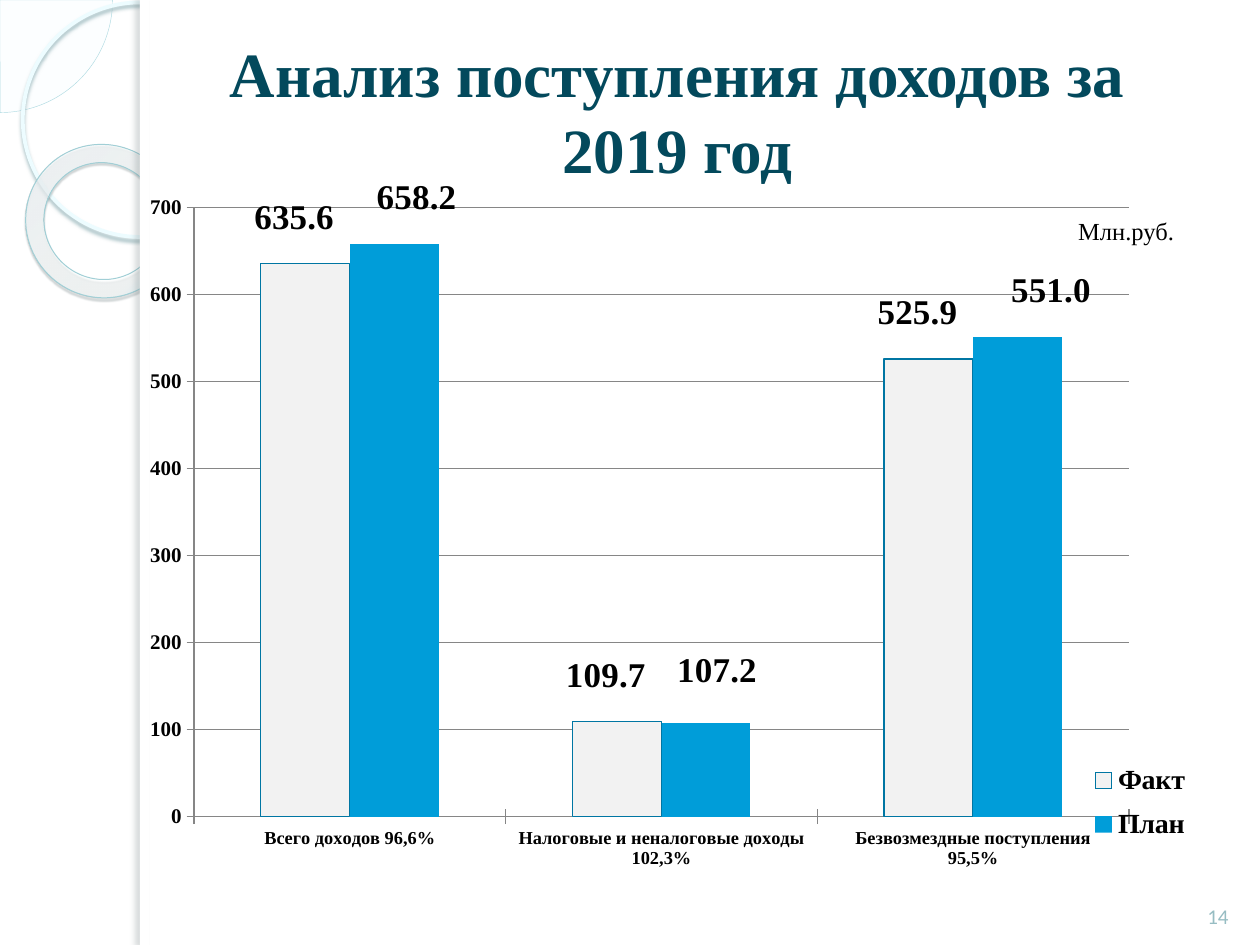
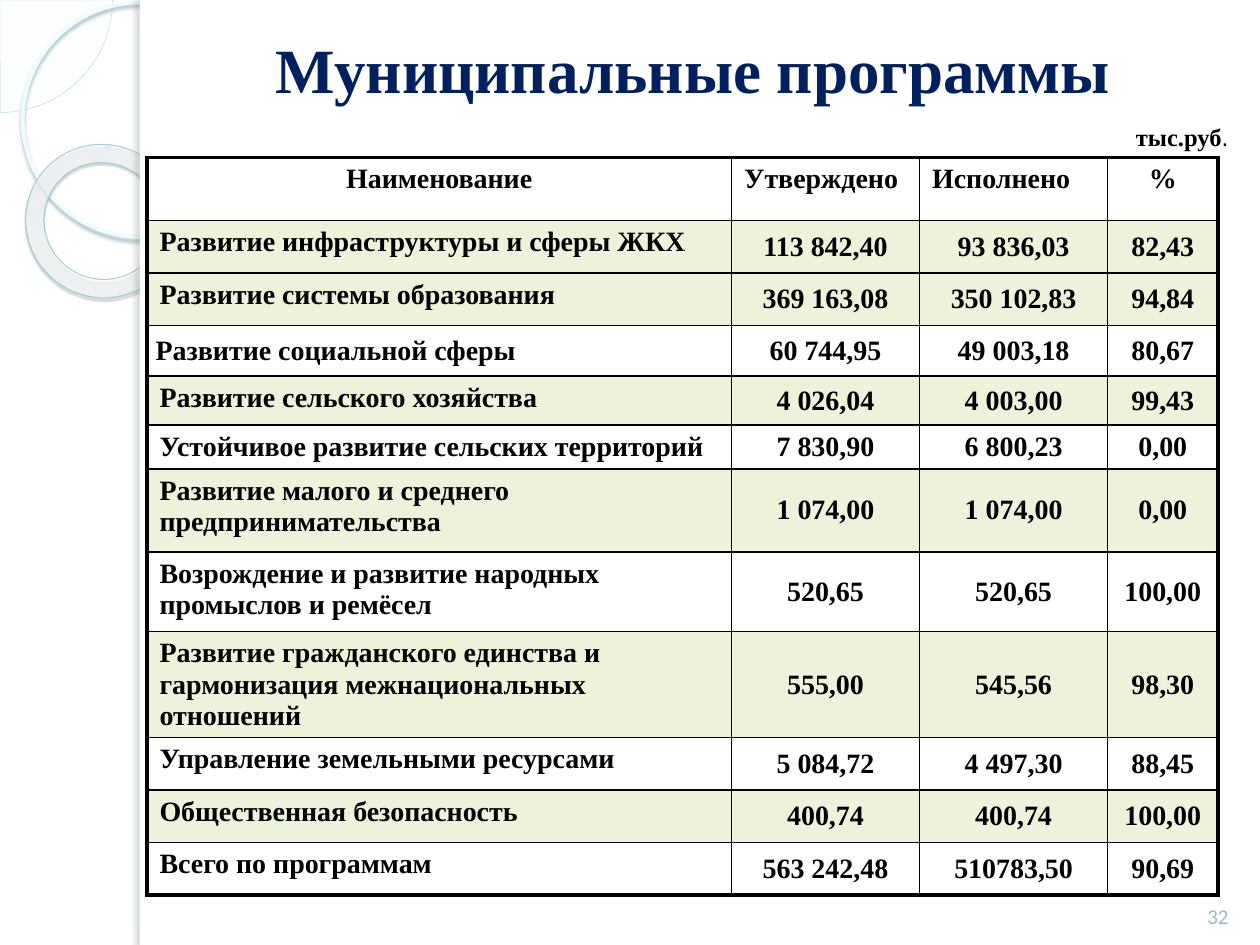
from pptx import Presentation
from pptx.chart import data as cd
from pptx.dml.color import RGBColor
from pptx.enum import chart as ch, shapes as sh, text as tx
from pptx.oxml import ns, parse_xml
from pptx.util import Pt

WHITE = RGBColor(0xFF, 0xFF, 0xFF)
BLACK = RGBColor(0, 0, 0)
TEAL = RGBColor(0x03, 0x49, 0x5C)
NAVY = RGBColor(0x00, 0x20, 0x60)
MIST = RGBColor(0x97, 0xBD, 0xC3)
GREEN = RGBColor(0xED, 0xF3, 0xDB)
GREY = RGBColor(0x86, 0x86, 0x86)
PALE = RGBColor(0xF2, 0xF2, 0xF2)
EDGE = RGBColor(0x00, 0x76, 0xA3)
BLUE = RGBColor(0x00, 0x9D, 0xD9)
ICE = RGBColor(0xF8, 0xFE, 0xFF)
RIM = RGBColor(0xAF, 0xDB, 0xE2)
GLOW = RGBColor(0xED, 0xFC, 0xFF)
RING = RGBColor(0xA1, 0xCF, 0xD6)

SERIF = "Times New Roman"
HEAD = {"name": SERIF, "size": Pt(36), "bold": True}
BODY = {"name": SERIF, "size": Pt(16), "bold": True}
NOTE = {"name": SERIF, "size": Pt(14), "bold": False}
PAGE = {"name": "Calibri", "size": Pt(12), "bold": False}
LEFT, MID, RIGHT = tx.PP_ALIGN.LEFT, tx.PP_ALIGN.CENTER, tx.PP_ALIGN.RIGHT

C15 = "http://schemas.microsoft.com/office/drawing/2012/chart"
GROUPS = ["Всего доходов 96,6%",
          "Налоговые и неналоговые доходы\n102,3%",
          "Безвозмездные поступления\n95,5%"]
BARS = [
    ("Факт", (635.6, 109.7, 525.9), PALE, EDGE,
     [(-0.01, -0.03), (-0.01, -0.03), (-0.01, -0.03)]),
    ("План", (658.2, 107.2, 551.0), BLUE, None,
     [(0.02, -0.03), (0.01, -0.04), (0.03, -0.03)]),
]

COLS = [334, 107.5, 107.5, 63]
ROWS = [
    (36, "Наименование", "Утверждено", "Исполнено", "%"),
    (30, "Развитие инфраструктуры и сферы ЖКХ", "113 842,40", "93 836,03", "82,43"),
    (30, "Развитие системы образования", "369 163,08", "350 102,83", "94,84"),
    (29, "Развитие социальной сферы", "60 744,95", "49 003,18", "80,67"),
    (28, "Развитие сельского хозяйства", "4 026,04", "4 003,00", "99,43"),
    (25, "Устойчивое развитие сельских территорий", "7 830,90", "6 800,23", "0,00"),
    (47.5, "Развитие малого и среднего предпринимательства",
     "1 074,00", "1 074,00", "0,00"),
    (45.5, "Возрождение и развитие народных промыслов и ремёсел",
     "520,65", "520,65", "100,00"),
    (60.5, "Развитие гражданского единства и гармонизация межнациональных отношений",
     "555,00", "545,56", "98,30"),
    (30, "Управление земельными ресурсами", "5 084,72", "4 497,30", "88,45"),
    (30, "Общественная безопасность", "400,74", "400,74", "100,00"),
    (30, "Всего по программам", "563 242,48", "510783,50", "90,69"),
]
SOCIAL = 3


def style(font, form, color=BLACK):
    """Apply a dict of format values and a colour to a font."""
    for key, val in form.items():
        setattr(font, key, val)
    font.color.rgb = color


def node(tag, attrs="", inner=""):
    """Return a new XML element with its namespace declared."""
    space = ns.nsdecls(tag.split(":")[0])
    return parse_xml(f"<{tag} {space} {attrs}>{inner}</{tag}>")


def tint(color, alpha):
    """Return the XML of a colour with an opacity in percent."""
    return f'<a:srgbClr val="{color}"><a:alpha val="{alpha * 1000}"/></a:srgbClr>'


def draw(slide, kind, box, fill=None, line=None, width=0, shade=None):
    """Add a preset shape with an optional fill, line and outer shadow."""
    shape = slide.shapes.add_shape(kind, *map(Pt, box))
    shape.shadow.inherit = False
    if fill is None:
        shape.fill.background()
    else:
        shape.fill.solid()
        shape.fill.fore_color.rgb = fill
    if line is None:
        shape.line.fill.background()
    else:
        shape.line.color.rgb = line
        shape.line.width = Pt(width)
    if shade:
        color, alpha, blur, dist, turn = shade
        attrs = (f'blurRad="{Pt(blur)}" dist="{Pt(dist)}" dir="{turn * 60000}" '
                 'algn="tl" rotWithShape="0"')
        effects = shape._element.spPr.find(ns.qn("a:effectLst"))
        effects.append(node("a:outerShdw", attrs, tint(color, alpha)))
    return shape


def add_decor(slide, layout):
    """Draw the side band once and hand it to the shared layout."""
    kinds = sh.MSO_SHAPE
    pie = draw(slide, kinds.PIE, (-64.3, -64.3, 128.6, 128.6), ICE, RIM, 0.25)
    pie.adjustments[0], pie.adjustments[1] = 0, 54
    color = pie._element.spPr.find(ns.qn("a:solidFill"))[0]
    color.append(node("a:alpha", 'val="33000"'))
    loop = draw(slide, kinds.OVAL, (13, 1.4, 134, 134), None, GLOW, 2.15,
                ("9CB9BE", 85, 2, 2, 90))
    ring = draw(slide, kinds.DONUT, (14.4, 82.8, 88.6, 87.1), None, RING, 0.58,
                ("4B5E61", 35, 1, 1.2, 75))
    ring.rotation = 38.6
    ring.adjustments[0] = 0.12
    stops = [(0, "F9FEFF", 70), (70, "FDFFFF", 55), (100, "9EF2FF", 60)]
    marks = "".join(f'<a:gs pos="{pos * 1000}">{tint(color, alpha)}</a:gs>'
                    for pos, color, alpha in stops)
    blend = node("a:gradFill", "", f'<a:gsLst>{marks}</a:gsLst><a:path path="circle">'
                 '<a:fillToRect l="-408000" t="-50000" r="508000" b="150000"/></a:path>')
    props = ring._element.spPr
    props.replace(props.find(ns.qn("a:noFill")), blend)
    panel = draw(slide, kinds.RECTANGLE, (80, 0, 640, 540), WHITE)
    strip = draw(slide, kinds.RECTANGLE, (80, 0, 5.5, 540), WHITE,
                 shade=("6C7A7C", 25, 3, 3, 180))
    for spot, part in enumerate((pie, loop, ring, panel, strip), 2):
        layout.shapes._spTree.insert(spot, part._element)


def set_title(slide, box, words, color):
    """Place and format the title."""
    title = slide.shapes.title
    title.left, title.top, title.width, title.height = map(Pt, box)
    frame = title.text_frame
    frame.text = words
    frame.auto_size = tx.MSO_AUTO_SIZE.NONE
    frame.vertical_anchor = tx.MSO_ANCHOR.MIDDLE
    line = frame.paragraphs[0]
    line.alignment = MID
    style(line.runs[0].font, HEAD, color)
    return title


def add_text(slide, box, runs, align, color=BLACK, anchor=tx.MSO_ANCHOR.TOP):
    """Add a line of text made of formatted runs."""
    frame = slide.shapes.add_textbox(*map(Pt, box)).text_frame
    frame.word_wrap = True
    frame.vertical_anchor = anchor
    line = frame.paragraphs[0]
    line.alignment = align
    for words, form in runs:
        run = line.add_run()
        run.text = words
        style(run.font, form, color)


def add_page(slide, number):
    """Add the page number in the lower right corner."""
    add_text(slide, (678, 497, 36, 37), [(number, PAGE)], MID, MIST,
             tx.MSO_ANCHOR.BOTTOM)


def set_place(part, spot, inner="", **sides):
    """Give a chart part a manual layout."""
    for old in part.findall(ns.qn("c:layout")):
        part.remove(old)
    marks = "".join(f'<c:{key} val="{val}"/>' for key, val in sides.items())
    part.insert(spot, node("c:layout", "", f"<c:manualLayout>{inner}{marks}</c:manualLayout>"))


def set_axis(axis, size):
    """Format a chart axis."""
    axis.major_tick_mark = ch.XL_TICK_MARK.CROSS
    axis.format.line.color.rgb = GREY
    style(axis.tick_labels.font, {**BODY, "size": Pt(size)})


def set_labels(series, shifts):
    """Format and shift the value labels, without leader lines."""
    for point, (x, y) in enumerate(shifts):
        label = series.points[point].data_label
        style(label.font, {**BODY, "size": Pt(20)})
        label.position = ch.XL_LABEL_POSITION.OUTSIDE_END
        part = label._dLbl
        set_place(part, 1, x=x, y=y)
        part.insert(2, node("c:numFmt", 'formatCode="#,##0.0" sourceLinked="0"'))
    group = series._element.find(ns.qn("c:dLbls"))
    for lead in group.findall(ns.qn("c:showLeaderLines")):
        group.remove(lead)
    group.append(node("c:showLeaderLines", 'val="0"'))
    group.append(node("c:extLst", "", '<c:ext uri="{CE6537A1-D6FC-4f65-9D91-7224C49458BB}" '
                      f'xmlns:c15="{C15}"><c15:showLeaderLines val="0"/></c:ext>'))


def add_bars(slide, box):
    """Add the column chart of income."""
    data = cd.CategoryChartData(number_format="#,##0.0")
    data.categories = GROUPS
    for name, vals, *_ in BARS:
        data.add_series(name, vals)
    kind = ch.XL_CHART_TYPE.COLUMN_CLUSTERED
    chart = slide.shapes.add_chart(kind, *map(Pt, box), data).chart
    style(chart.font, {"name": "Calibri", "size": Pt(18)})
    chart.has_title = False
    plot = chart.plots[0]
    plot.vary_by_categories = False
    plot.gap_width, plot.overlap = 150, 0
    for series, (_, _, fill, edge, shifts) in zip(plot.series, BARS):
        series.format.fill.solid()
        series.format.fill.fore_color.rgb = fill
        if edge is None:
            series.format.line.fill.background()
        else:
            series.format.line.color.rgb = edge
            series.format.line.width = Pt(0.75)
        set_labels(series, shifts)
    scale = chart.value_axis
    set_axis(chart.category_axis, 10.5)
    set_axis(scale, 12)
    scale.minimum_scale, scale.maximum_scale, scale.major_unit = 0, 700, 100
    scale.tick_labels.number_format = "#,##0"
    scale.tick_labels.number_format_is_linked = False
    scale.major_gridlines.format.line.color.rgb = GREY
    chart.has_legend = True
    legend = chart.legend
    legend.position = ch.XL_LEGEND_POSITION.RIGHT
    legend.include_in_layout = False
    style(legend.font, BODY)
    pinned = '<c:xMode val="edge"/><c:yMode val="edge"/>'
    set_place(legend._element, 1, pinned, x=0.88, y=0.79, w=0.1, h=0.14)
    area = chart._chartSpace.chart.plotArea
    set_place(area, 0, '<c:layoutTarget val="inner"/>' + pinned,
              x=0.08, y=0.03, w=0.84, h=0.85)


def set_edges(cell, row, col):
    """Draw thick outer and thin inner borders around a cell."""
    outer = {"L": col == 0, "R": col == len(COLS) - 1,
             "T": row == 0, "B": row == len(ROWS) - 1}
    for spot, (side, thick) in enumerate(outer.items()):
        edge = node(f"a:ln{side}", f'w="{Pt(2.25 if thick else 1)}"',
                    f'<a:solidFill><a:srgbClr val="{BLACK}"/></a:solidFill>')
        cell._tc.get_or_add_tcPr().insert(spot, edge)


def set_cell(cell, row, col, words):
    """Fill and format one table cell."""
    cell.fill.solid()
    cell.fill.fore_color.rgb = GREEN if row == 1 or row and row % 2 == 0 else WHITE
    cell.text = words
    line = cell.text_frame.paragraphs[0]
    style(line.runs[0].font, BODY)
    line.alignment = MID if col == 3 or (row == 0) == (col == 0) else LEFT
    if row and (col or row == SOCIAL):
        cell.vertical_anchor = tx.MSO_ANCHOR.MIDDLE
        cell.margin_left = cell.margin_right = Pt(5)
        cell.margin_top = cell.margin_bottom = 0
    set_edges(cell, row, col)


def add_grid(slide, left, top):
    """Add the table of programmes."""
    high = sum(row[0] for row in ROWS)
    table = slide.shapes.add_table(len(ROWS), len(COLS), Pt(left), Pt(top),
                                   Pt(sum(COLS)), Pt(high)).table
    table.first_row = table.horz_banding = False
    for col, width in enumerate(COLS):
        table.columns[col].width = Pt(width)
    for row, (height, *words) in enumerate(ROWS):
        table.rows[row].height = Pt(height)
        for col, word in enumerate(words):
            set_cell(table.cell(row, col), row, col, word)


def main():
    """Build both slides and save them."""
    deck = Presentation()
    deck.slide_width, deck.slide_height = Pt(720), Pt(540)
    layout = deck.slide_layouts[5]

    income = deck.slides.add_slide(layout)
    add_decor(income, layout)
    set_title(income, (96, 24, 582, 78), "Анализ поступления доходов за 2019 год", TEAL)
    add_bars(income, (60, 102, 636, 414))
    add_page(income, "14")
    add_text(income, (534, 120, 144, 24.5), [("Млн.руб.", NOTE)], RIGHT)

    plans = deck.slides.add_slide(layout)
    title = set_title(plans, (102, 12, 588, 54), "Муниципальные программы", NAVY)
    title.fill.solid()
    title.fill.fore_color.rgb = WHITE
    add_grid(plans, 84, 90)
    add_page(plans, "32")
    add_text(plans, (642, 66, 69, 24.5),
             [("тыс.руб", {**NOTE, "bold": True}), (".", {**NOTE, "name": "Arial"})], LEFT)

    deck.save("out.pptx")


if __name__ == "__main__":
    main()
